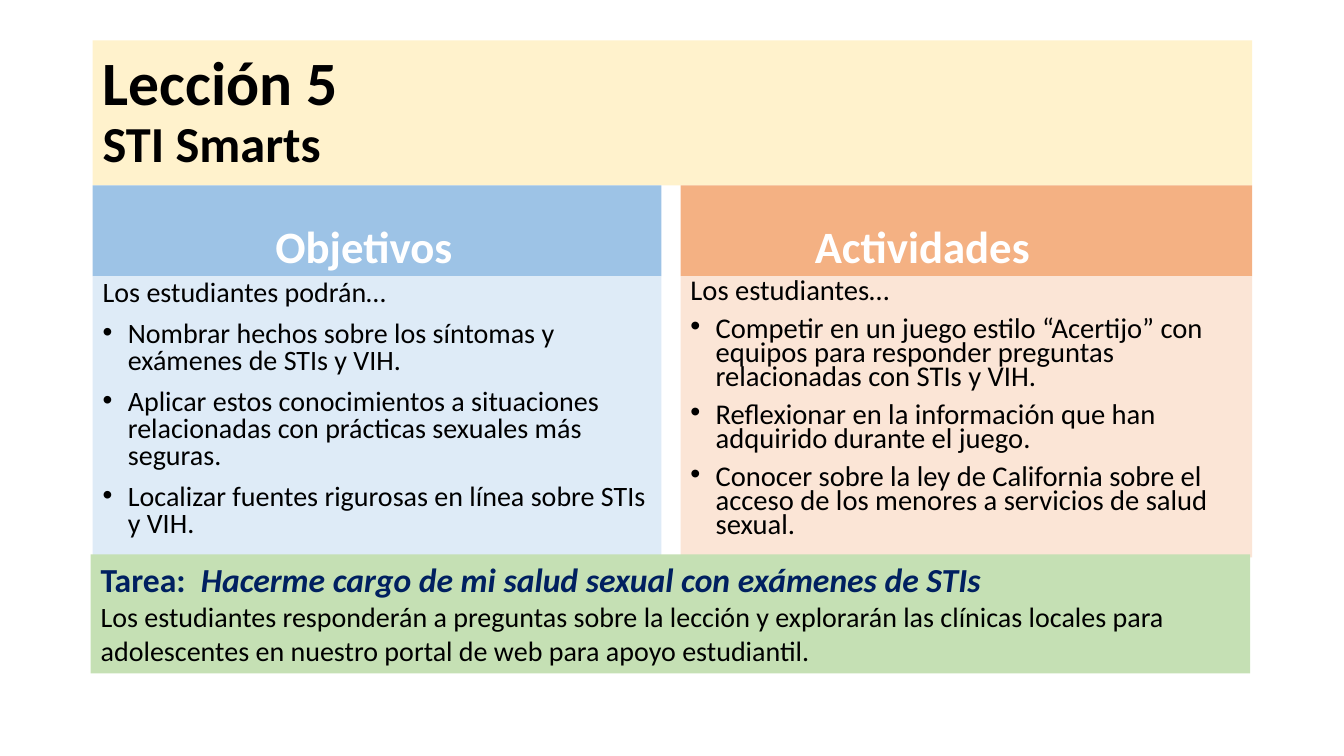
from dataclasses import dataclass

from lxml import etree
from pptx import Presentation
from pptx.dml.color import RGBColor
from pptx.enum.shapes import MSO_SHAPE
from pptx.enum.text import MSO_ANCHOR, PP_ALIGN
from pptx.oxml.ns import qn
from pptx.util import Inches, Pt

RECTANGLE = MSO_SHAPE.RECTANGLE
TOP, MIDDLE, BOTTOM = MSO_ANCHOR.TOP, MSO_ANCHOR.MIDDLE, MSO_ANCHOR.BOTTOM
LEFT, CENTER = PP_ALIGN.LEFT, PP_ALIGN.CENTER

LESSON = "Lección 5"
TOPIC = "STI Smarts"
COLUMNS = [
    {
        "heading": "Objetivos",
        "intro": "Los estudiantes podrán…",
        "items": [
            "Nombrar hechos sobre los síntomas y exámenes de STIs y VIH.",
            "Aplicar estos conocimientos a situaciones relacionadas con prácticas sexuales más seguras.",
            "Localizar fuentes rigurosas en línea sobre STIs y VIH.",
        ],
        "left": 0.92, "width": 5.64, "heading_inset": 0.36,
        "dark": "9DC3E6", "light": "DEEBF7", "size": 20, "spacing": 0.8,
    },
    {
        "heading": "Actividades",
        "intro": "Los estudiantes…",
        "items": [
            "Competir en un juego estilo “Acertijo” con equipos para responder preguntas relacionadas con STIs y VIH.",
            "Reflexionar en la información que han adquirido durante el juego.",
            "Conocer sobre la ley de California sobre el acceso de los menores a servicios de salud sexual.",
        ],
        "left": 6.75, "width": 5.67, "heading_inset": 0.97,
        "dark": "F4B183", "light": "FBE5D6", "size": 20.4, "spacing": 0.7,
    },
]
HOMEWORK_LABEL = "Tarea:  "
HOMEWORK_TITLE = "Hacerme cargo de mi salud sexual con exámenes de STIs"
HOMEWORK_TEXT = (
    "Los estudiantes responderán a preguntas sobre la lección y explorarán las clínicas "
    "locales para adolescentes en nuestro portal de web para apoyo estudiantil."
)


@dataclass(frozen=True)
class Theme:
    font: str = "Calibri"
    ink: str = "000000"
    white: str = "FFFFFF"
    navy: str = "002060"
    title_fill: str = "FFF2CC"
    homework_fill: str = "C5E0B4"
    lesson_size: int = 44
    topic_size: int = 36
    heading_size: int = 32
    homework_size: int = 24
    body_size: int = 20


THEME = Theme()
SLIDE_WIDTH, SLIDE_HEIGHT = 13.33, 7.5
FULL_WIDTH = 11.5
TITLE_TOP, HEADING_TOP, BODY_TOP, BODY_BOTTOM = 0.4, 1.84, 2.74, 5.53
HOMEWORK_LEFT, HOMEWORK_TOP, HOMEWORK_HEIGHT = 0.9, 5.5, 1.18
BULLET_INDENT = 0.25


def add_panel(slide, left, top, width, height, fill, anchor):
    shape = slide.shapes.add_shape(
        RECTANGLE, Inches(left), Inches(top), Inches(width), Inches(height)
    )
    shape.shadow.inherit = False
    shape.fill.solid()
    shape.fill.fore_color.rgb = RGBColor.from_string(fill)
    shape.line.fill.background()
    shape.text_frame.word_wrap = True
    shape.text_frame.vertical_anchor = anchor
    return shape.text_frame


def style_font(font, size, color, bold=False):
    font.name = THEME.font
    font.size = Pt(size)
    font.bold = bold
    font.color.rgb = RGBColor.from_string(color)


def style_paragraph(paragraph, size, color, bold=False, align=LEFT):
    paragraph.alignment = align
    style_font(paragraph.font, size, color, bold)


def add_bullet(paragraph):
    properties = paragraph._p.get_or_add_pPr()
    properties.set("marL", str(Inches(BULLET_INDENT)))
    properties.set("indent", str(-Inches(BULLET_INDENT)))
    font = etree.Element(qn("a:buFont"), typeface="Arial")
    bullet = etree.Element(qn("a:buChar"), char="•")
    properties.insert_element_before(font, "a:defRPr")
    properties.insert_element_before(bullet, "a:defRPr")


def add_title(slide):
    frame = add_panel(slide, COLUMNS[0]["left"], TITLE_TOP, FULL_WIDTH,
                      HEADING_TOP - TITLE_TOP, THEME.title_fill, MIDDLE)
    paragraph = frame.paragraphs[0]
    paragraph.alignment = LEFT
    paragraph.line_spacing = 0.9
    lesson = paragraph.add_run()
    lesson.text = LESSON
    style_font(lesson.font, THEME.lesson_size, THEME.ink, True)
    paragraph.add_line_break()
    topic = paragraph.add_run()
    topic.text = TOPIC
    style_font(topic.font, THEME.topic_size, THEME.ink, True)


def add_column(slide, column):
    left, width = column["left"], column["width"]
    heading = add_panel(slide, left, HEADING_TOP, width, BODY_TOP - HEADING_TOP,
                        column["dark"], BOTTOM)
    heading.margin_right = Inches(column["heading_inset"])
    heading.margin_bottom = Inches(0.04)
    heading.paragraphs[0].text = column["heading"]
    style_paragraph(heading.paragraphs[0], THEME.heading_size, THEME.white, True, CENTER)

    body = add_panel(slide, left, BODY_TOP, width, BODY_BOTTOM - BODY_TOP,
                     column["light"], TOP)
    body.text = "\n".join([column["intro"], *column["items"]])
    for paragraph in body.paragraphs:
        style_paragraph(paragraph, column["size"], THEME.ink)
        paragraph.line_spacing = column["spacing"]
        paragraph.space_before = Pt(10)
    for paragraph in body.paragraphs[1:]:
        add_bullet(paragraph)


def add_homework(slide):
    frame = add_panel(slide, HOMEWORK_LEFT, HOMEWORK_TOP, FULL_WIDTH, HOMEWORK_HEIGHT,
                      THEME.homework_fill, TOP)
    heading = frame.paragraphs[0]
    style_paragraph(heading, THEME.homework_size, THEME.navy, True)
    heading.add_run().text = HOMEWORK_LABEL
    title = heading.add_run()
    title.text = HOMEWORK_TITLE
    title.font.italic = True
    detail = frame.add_paragraph()
    detail.text = HOMEWORK_TEXT
    style_paragraph(detail, THEME.body_size, THEME.ink)


def main():
    presentation = Presentation()
    presentation.slide_width = Inches(SLIDE_WIDTH)
    presentation.slide_height = Inches(SLIDE_HEIGHT)
    slide = presentation.slides.add_slide(presentation.slide_layouts[6])
    add_title(slide)
    for column in COLUMNS:
        add_column(slide, column)
    add_homework(slide)
    presentation.save("out.pptx")


if __name__ == "__main__":
    main()
